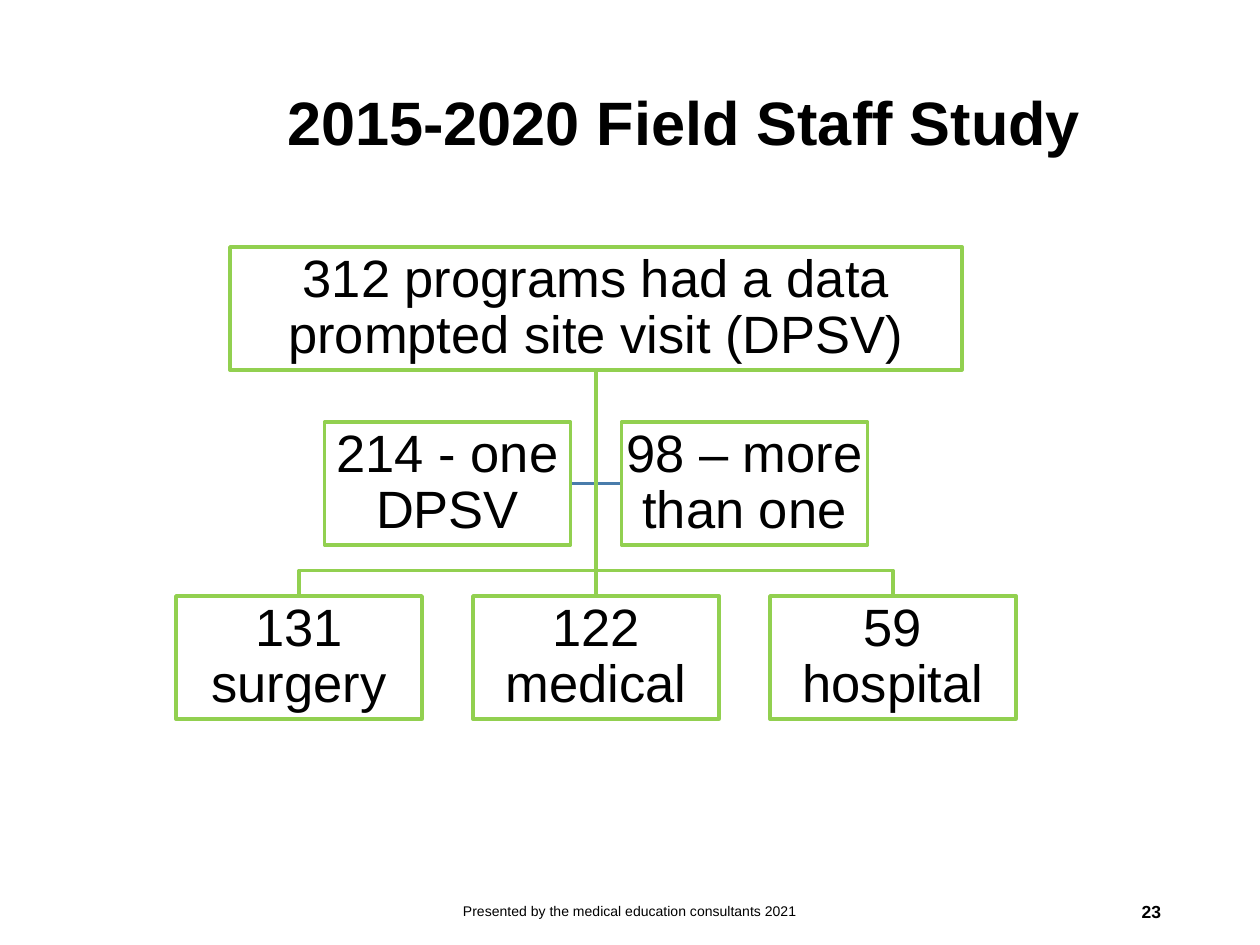
from pptx import Presentation
from pptx.dml.color import RGBColor
from pptx.enum.shapes import MSO_CONNECTOR, MSO_SHAPE
from pptx.enum.text import MSO_ANCHOR, PP_ALIGN
from pptx.oxml.ns import qn
from pptx.util import Pt
from lxml import etree

PX = 914400 / 126
STRAIGHT = MSO_CONNECTOR.STRAIGHT
RECTANGLE = MSO_SHAPE.RECTANGLE
MIDDLE, TOP = MSO_ANCHOR.MIDDLE, MSO_ANCHOR.TOP
LEFT, CENTER, RIGHT = PP_ALIGN.LEFT, PP_ALIGN.CENTER, PP_ALIGN.RIGHT
COLORS = {"text": "000000", "branch": "92D050", "assistant": "497CAB"}

# Chart geometry in px
CENTER_X = 596
ROW_TOPS = (247, 422, 596)
BOX_WIDTH, BOX_HEIGHT, GAP = 246, 123, 51
ROOT_WIDTH = 732
PITCH = BOX_WIDTH + GAP


def emu(px):
    return round(px * PX)


def color(name):
    return RGBColor.from_string(COLORS[name])


def write(shape, text, size, align, anchor, insets, bold=False, spacing=None):
    frame = shape.text_frame
    frame.word_wrap = True
    frame.vertical_anchor = anchor
    frame.margin_left = frame.margin_right = emu(insets[0])
    frame.margin_top = frame.margin_bottom = emu(insets[1])
    para = frame.paragraphs[0]
    para.text = text
    para.alignment = align
    para.line_spacing = spacing
    para.font.name = "Arial"
    para.font.size = Pt(size)
    para.font.bold = bold
    para.font.color.rgb = color("text")


def add_text(page, area, *style, **options):
    box = page.shapes.add_textbox(*map(emu, area))
    write(box, *style, **options)


def set_line(shape, name):
    shape.line.color.rgb = color(name)
    shape.line.width = Pt(2)


def add_node(page, center, top, width, text):
    node = page.shapes.add_shape(
        RECTANGLE, emu(center - width / 2), emu(top), emu(width), emu(BOX_HEIGHT))
    node.shadow.inherit = False
    node.fill.background()
    set_line(node, "branch")
    write(node, text, 30, CENTER, MIDDLE, (2, 2), spacing=0.9)


def add_elbow(page, points, name):
    start, *rest = [(emu(x), emu(y)) for x, y in points]
    builder = page.shapes.build_freeform(*start)
    builder.add_line_segments(rest, close=False)
    elbow = builder.convert_to_shape()
    elbow.shadow.inherit = False
    elbow.fill.background()
    set_line(elbow, name)


def add_trunk(page, top, bottom):
    trunk = page.shapes.add_connector(
        STRAIGHT, emu(CENTER_X), emu(top), emu(CENTER_X), emu(bottom))
    set_line(trunk, "branch")
    etree.SubElement(trunk._element.spPr, qn("a:effectLst"))


def add_chart_lines(page):
    root_bottom = ROW_TOPS[0] + BOX_HEIGHT
    assistant_y = ROW_TOPS[1] + BOX_HEIGHT / 2
    leaf_top = ROW_TOPS[2]
    branch_y = leaf_top - GAP / 2
    start = (CENTER_X, root_bottom)
    for side in (1, -1):
        add_elbow(page, [start, (CENTER_X, assistant_y),
                         (CENTER_X + side * GAP / 2, assistant_y)], "assistant")
    for side in (1, -1):
        leaf_x = CENTER_X + side * PITCH
        add_elbow(page, [start, (CENTER_X, branch_y), (leaf_x, branch_y),
                         (leaf_x, leaf_top)], "branch")
    add_trunk(page, root_bottom, leaf_top)


def add_row(page, top, width, texts):
    first = CENTER_X - PITCH * (len(texts) - 1) / 2
    for index, text in enumerate(texts):
        add_node(page, first + index * PITCH, top, width, text)


def main():
    deck = Presentation()
    deck.slide_width, deck.slide_height = emu(1260), emu(945)
    page = deck.slides.add_slide(deck.slide_layouts[6])

    # Title
    add_text(page, (275, 34, 900, 183), "2015-2020 Field Staff Study",
             35, LEFT, MIDDLE, (12, 12), bold=True, spacing=0.9)

    # Organisation chart
    add_chart_lines(page)
    add_row(page, ROW_TOPS[0], ROOT_WIDTH,
            ["312 programs had a data prompted site visit (DPSV)"])
    add_row(page, ROW_TOPS[1], BOX_WIDTH, ["214 - one DPSV", "98 – more than one"])
    add_row(page, ROW_TOPS[2], BOX_WIDTH,
            ["131 surgery", "122 medical", "59 hospital"])

    # Footer and page number
    add_text(page, (417, 886, 426, 50),
             "Presented by the medical education consultants 2021",
             8, CENTER, MIDDLE, (12, 6))
    add_text(page, (890, 887, 283, 50), "23", 10, RIGHT, MIDDLE, (12, 6), bold=True)

    deck.save("out.pptx")


if __name__ == "__main__":
    main()
